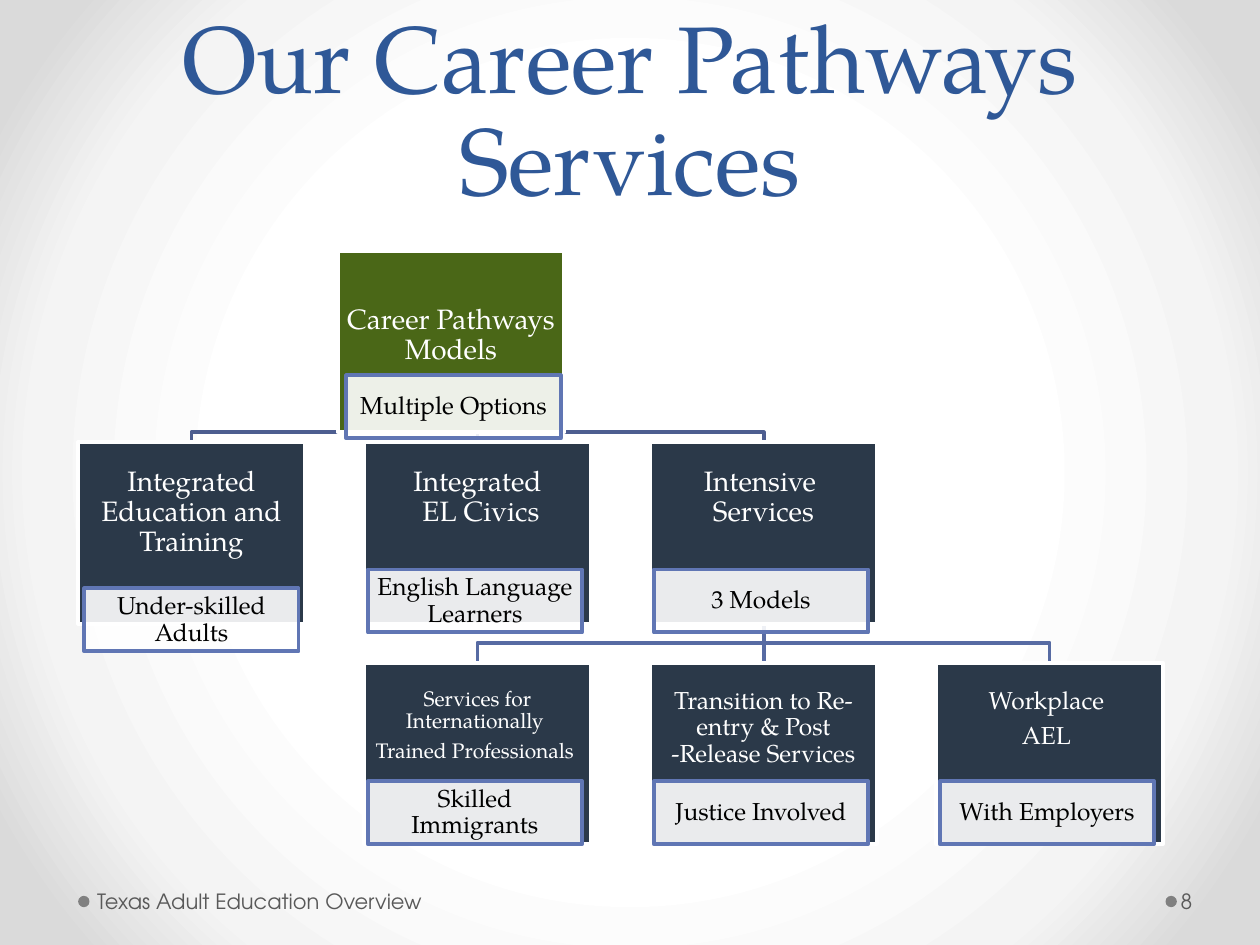
import pptx
import pptx.util
import pptx.dml.color
import pptx.enum.shapes
import pptx.enum.text
import pptx.oxml
import pptx.oxml.ns
from lxml import etree

RGBColor = pptx.dml.color.RGBColor
WHITE = RGBColor(0xFF, 0xFF, 0xFF)
BLACK = RGBColor(0, 0, 0)
BLUE = RGBColor(0x2F, 0x58, 0x97)
GREEN = RGBColor(0x4A, 0x67, 0x17)
NAVY = RGBColor(0x2B, 0x39, 0x49)
OUTLINE = RGBColor(0x60, 0x76, 0xB4)
UPPER_BRANCH = RGBColor(0x4D, 0x5E, 0x90)
LOWER_BRANCH = RGBColor(0x57, 0x6B, 0xA3)
DOT = RGBColor(0x80, 0x80, 0x80)
FOOTER = RGBColor(0x59, 0x59, 0x59)
SERIF = "TeX Gyre Pagella"
SANS = "TeX Gyre Adventor"
Inches = pptx.util.Inches
Points = pptx.util.Pt
Shapes = pptx.enum.shapes.MSO_SHAPE
Anchor = pptx.enum.text.MSO_ANCHOR
Align = pptx.enum.text.PP_ALIGN

COLUMNS = [0.62 + 2.27 * index for index in range(4)]
BOX_WIDTH, BOX_HEIGHT = 1.8, 1.44
CAPTION_WIDTH, CAPTION_HEIGHT = 1.7, 0.5
TOP, MIDDLE, BOTTOM = 1.99, 3.51, 5.26
ROOT_LEFT = 2.68


def write(shape, text, size, font, color, anchor, insets, align=Align.CENTER, spacing=0.9):
    frame = shape.text_frame
    frame.word_wrap = True
    frame.vertical_anchor = anchor
    frame.margin_left, frame.margin_top, frame.margin_right, frame.margin_bottom = map(Inches, insets)
    frame.text = text
    for paragraph in frame.paragraphs:
        paragraph.alignment = align
        paragraph.line_spacing = spacing
        paragraph.space_after = Points(round(0.35 * size, 1)) if spacing == 0.9 else Points(0)
        paragraph.font.size = Points(size)
        paragraph.font.name = font
        paragraph.font.color.rgb = color


def add_box(left, top, width, height, fill, line):
    box = slide.shapes.add_shape(Shapes.RECTANGLE, *map(Inches, (left, top, width, height)))
    box.shadow.inherit = False
    box.fill.solid()
    box.fill.fore_color.rgb = fill
    box.line.color.rgb = line
    box.line.width = Points(2.25)
    return box


presentation = pptx.Presentation()
presentation.slide_width = Inches(10)
presentation.slide_height = Inches(7.5)
slide = presentation.slides.add_slide(presentation.slide_layouts[6])

background = slide.background.fill
background.gradient()
gradient = slide.background._cSld.find(".//" + pptx.oxml.ns.qn("a:gradFill"))
for child in list(gradient):
    gradient.remove(child)
stops = etree.SubElement(gradient, pptx.oxml.ns.qn("a:gsLst"))
for position, color in ((50, "FFFFFF"), (76, "F4F4F4"), (92, "DADADA")):
    stop = etree.SubElement(stops, pptx.oxml.ns.qn("a:gs"), pos=str(position * 1000))
    etree.SubElement(stop, pptx.oxml.ns.qn("a:srgbClr"), val=color)
circle = etree.SubElement(gradient, pptx.oxml.ns.qn("a:path"))
circle.set("path", "circle")
etree.SubElement(circle, pptx.oxml.ns.qn("a:fillToRect"), l="50000", t="50000", r="50000", b="50000")

for left in (9.25, COLUMNS[0]):
    dot = slide.shapes.add_shape(Shapes.OVAL, *map(Inches, (left, 7.11, 0.09, 0.09)))
    dot.shadow.inherit = False
    dot.fill.solid()
    dot.fill.fore_color.rgb = DOT
    dot.line.fill.background()

title = slide.shapes.add_textbox(*map(Inches, (0.5, 0, 9, 1.75)))
write(title, "Our Career Pathways Services", 54, SERIF, BLUE, Anchor.BOTTOM,
      (0.1, 0.05, 0.1, 0.05), spacing=Points(58))

for parent_left, parent_top, row, bend, columns, color in (
    (COLUMNS[2], MIDDLE, BOTTOM, 5.1, (3, 2, 1), LOWER_BRANCH),
    (ROOT_LEFT, TOP, MIDDLE, TOP + BOX_HEIGHT, (2, 1, 0), UPPER_BRANCH),
):
    start, parent_bottom, bend, row = map(
        Inches, (parent_left + BOX_WIDTH / 2, parent_top + BOX_HEIGHT, bend, row))
    for column in columns:
        end = Inches(COLUMNS[column] + BOX_WIDTH / 2)
        if end == start:
            branch = slide.shapes.add_connector(
                pptx.enum.shapes.MSO_CONNECTOR.STRAIGHT, start, parent_bottom, end, row)
            etree.SubElement(branch._element.spPr, pptx.oxml.ns.qn("a:effectLst"))
        else:
            builder = slide.shapes.build_freeform(start, parent_bottom)
            builder.add_line_segments([(start, bend), (end, bend), (end, row)], close=False)
            branch = builder.convert_to_shape()
            branch.shadow.inherit = False
            branch.fill.background()
        branch.line.color.rgb = color
        branch.line.width = Points(2.25)

for left, top, fill, text, size, caption, caption_left, caption_top in (
    (ROOT_LEFT, TOP, GREEN, "Career Pathways Models", 16, "Multiple Options", 0.07, 0.99),
    (COLUMNS[0], MIDDLE, NAVY, "Integrated Education and Training", 16, "Under-skilled Adults", 0.05, 1.16),
    (COLUMNS[1], MIDDLE, NAVY, "Integrated\v EL Civics", 16, "English Language Learners", 0.03, 1.01),
    (COLUMNS[2], MIDDLE, NAVY, "Intensive \vServices", 16, "3 Models", 0.03, 1.01),
    (COLUMNS[1], BOTTOM, NAVY, "Services for Internationally \nTrained Professionals ", 12,
     "Skilled Immigrants", 0.03, 0.94),
    (COLUMNS[2], BOTTOM, NAVY, "Transition to Re-entry & Post -Release Services", 14,
     "Justice Involved", 0.03, 0.94),
    (COLUMNS[3], BOTTOM, NAVY, "Workplace \nAEL ", 14, "With Employers", 0.03, 0.94),
):
    box = add_box(left, top, BOX_WIDTH, BOX_HEIGHT, fill, WHITE)
    is_root = top == TOP
    write(box, text, size, SERIF, WHITE, Anchor.MIDDLE if is_root else Anchor.TOP,
          (0.01, 0.01 if is_root else 0.2, 0.01, 0.1))
    label = add_box(left + caption_left, top + caption_top, CAPTION_WIDTH, CAPTION_HEIGHT, WHITE, OUTLINE)
    fill_color = label._element.spPr.find(pptx.oxml.ns.qn("a:solidFill"))[0]
    etree.SubElement(fill_color, pptx.oxml.ns.qn("a:alpha"), val="90000")
    write(label, caption, 14, SERIF, BLACK, Anchor.MIDDLE, (0.03, 0.01, 0.03, 0.01))

for left, width, text, insets in (
    (0.72, 3.11, "Texas Adult Education Overview", (0.05, 0.05, 0.1, 0.05)),
    (9.34, 0.61, "8", (0.03, 0.05, 0.05, 0.05)),
):
    footer = slide.shapes.add_textbox(*map(Inches, (left, 6.95, width, 0.4)))
    write(footer, text, 12, SANS, FOOTER, Anchor.MIDDLE, insets, Align.LEFT, 1.0)

presentation.save("out.pptx")
